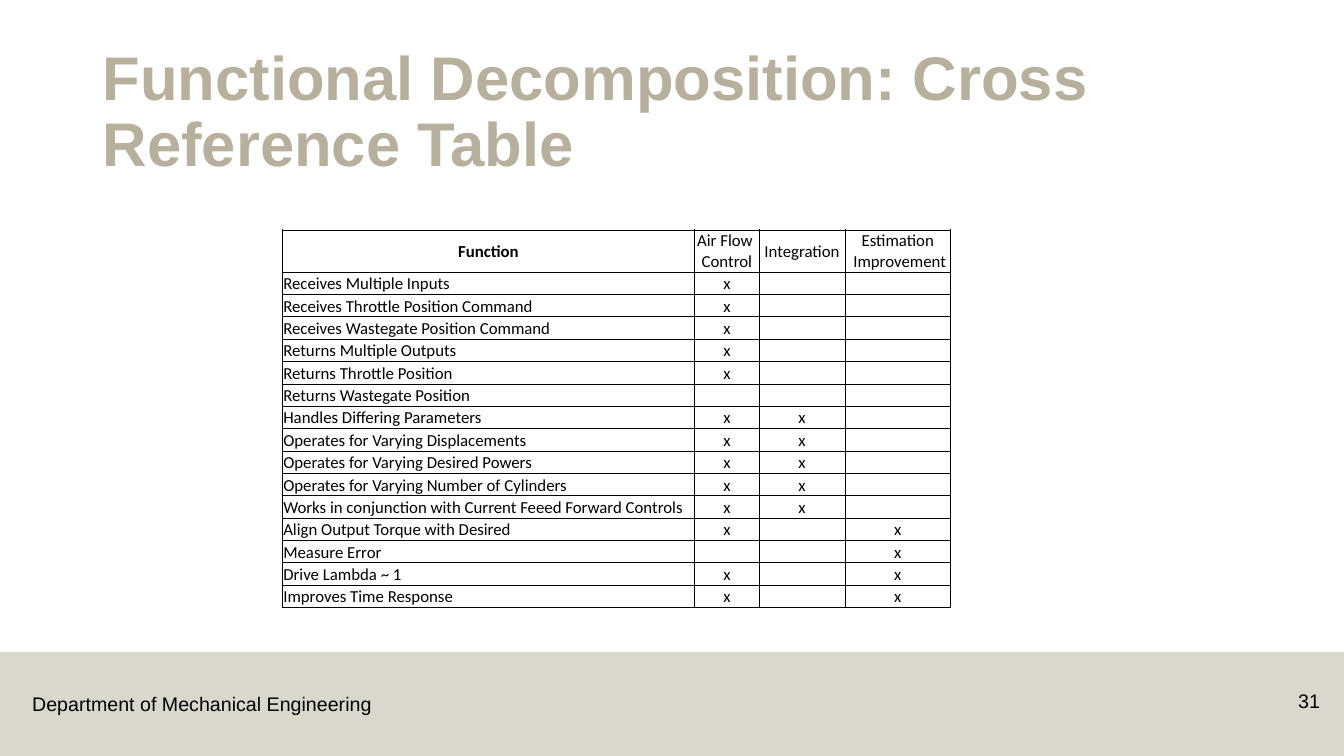
"""Build the functional decomposition cross reference slide."""
from copy import deepcopy

from lxml import etree
from pptx import Presentation
from pptx import util as u
from pptx.dml.color import RGBColor
from pptx.enum import shapes, text
from pptx.oxml.ns import qn

TITLE = "Functional Decomposition: Cross Reference Table"
DEPARTMENT = "Department of Mechanical Engineering"
PAGE = "31"
HEADERS = ["Function", "Air Flow \nControl", "Integration", "Estimation\n Improvement"]
FUNCTIONS = [
    ("Receives Multiple Inputs", "x", "", ""),
    ("Receives Throttle Position Command", "x", "", ""),
    ("Receives Wastegate Position Command", "x", "", ""),
    ("Returns Multiple Outputs", "x", "", ""),
    ("Returns Throttle Position", "x", "", ""),
    ("Returns Wastegate Position", "", "", ""),
    ("Handles Differing Parameters", "x", "x", ""),
    ("Operates for Varying Displacements", "x", "x", ""),
    ("Operates for Varying Desired Powers", "x", "x", ""),
    ("Operates for Varying Number of Cylinders", "x", "x", ""),
    ("Works in conjunction with Current Feeed Forward Controls", "x", "x", ""),
    ("Align Output Torque with Desired", "x", "", "x"),
    ("Measure Error", "", "", "x"),
    ("Drive Lambda ~ 1", "x", "", "x"),
    ("Improves Time Response", "x", "", "x"),
]
COL_WIDTHS = [4.09, 0.64, 0.85, 1.05]
HEADER_HEIGHT, ROW_HEIGHT = 0.42, 0.222
TAN = RGBColor(0xB7, 0xB0, 0x9C)
BLACK = RGBColor(0, 0, 0)
LEFT, CENTER, RIGHT = text.PP_ALIGN.LEFT, text.PP_ALIGN.CENTER, text.PP_ALIGN.RIGHT
TOP, MIDDLE, BOTTOM = text.MSO_ANCHOR.TOP, text.MSO_ANCHOR.MIDDLE, text.MSO_ANCHOR.BOTTOM


def write(tf, words, size=14, font="Arial", color=BLACK, bold=False, align=LEFT, spacing=None):
    p = tf.paragraphs[0]
    p.text = words
    p.alignment = align
    if spacing:
        p.line_spacing = spacing
    for r in p.runs:
        r.font.size, r.font.name, r.font.bold = u.Pt(size), font, bold
        r.font.color.rgb = color
    for br in p._p.findall(qn("a:br")):
        br.append(deepcopy(p.runs[0]._r.rPr))
    if not words:
        etree.SubElement(p._p, qn("a:endParaRPr"), sz=str(size * 100))


def add_text(s, box, words, anchor=TOP, **fmt):
    tf = s.shapes.add_textbox(*map(u.Inches, box)).text_frame
    tf.word_wrap = True
    tf.vertical_anchor = anchor
    write(tf, words, **fmt)


def add_borders(cell):
    tc_pr = cell._tc.get_or_add_tcPr()
    for i, side in enumerate(("a:lnL", "a:lnR", "a:lnT", "a:lnB")):
        ln = etree.Element(qn(side), w=str(u.Pt(0.5)))
        fill = etree.SubElement(ln, qn("a:solidFill"))
        etree.SubElement(fill, qn("a:srgbClr"), val=str(BLACK))
        tc_pr.insert(i, ln)


def add_footer_band(s):
    sp = s.shapes.add_shape(shapes.MSO_SHAPE.RECTANGLE, *map(u.Inches, (0, 6.47, 13.33, 1.03)))
    sp.shadow.inherit = False
    sp.fill.solid()
    sp.fill.fore_color.rgb = TAN
    sp.line.fill.background()
    color = sp._element.spPr.find(qn("a:solidFill"))[0]
    etree.SubElement(color, qn("a:alpha"), val="50000")


def add_cross_reference(s):
    rows = [HEADERS, *FUNCTIONS]
    heights = [HEADER_HEIGHT] + [ROW_HEIGHT] * len(FUNCTIONS)
    box = (2.8, 2.28, sum(COL_WIDTHS), sum(heights))
    table = s.shapes.add_table(len(rows), len(HEADERS), *map(u.Inches, box)).table
    table.first_row = table.horz_banding = False
    for col, width in zip(table.columns, COL_WIDTHS):
        col.width = u.Inches(width)
    for i, (values, height) in enumerate(zip(rows, heights)):
        table.rows[i].height = u.Inches(height)
        for j, value in enumerate(values):
            cell = table.cell(i, j)
            cell.margin_left = cell.margin_right = cell.margin_top = u.Inches(0.01)
            cell.margin_bottom = 0
            header_anchor = TOP if "\n" in value else MIDDLE
            cell.vertical_anchor = BOTTOM if i else header_anchor
            cell.fill.background()
            add_borders(cell)
            write(cell.text_frame, value, size=12, font="Calibri",
                  bold=i == j == 0, align=LEFT if i and j == 0 else CENTER)


def main():
    prs = Presentation()
    prs.slide_width, prs.slide_height = u.Inches(13.33), u.Inches(7.5)
    s = prs.slides.add_slide(prs.slide_layouts[6])
    add_footer_band(s)
    add_text(s, (0.22, 6.82, 3.59, 0.34), DEPARTMENT)
    add_text(s, (0.92, 0.4, 11.5, 1.45), TITLE, anchor=MIDDLE,
             size=44, color=TAN, bold=True, spacing=0.9)
    add_text(s, (12.42, 6.79, 0.77, 0.4), PAGE, align=RIGHT)
    add_cross_reference(s)
    prs.save("out.pptx")


if __name__ == "__main__":
    main()
